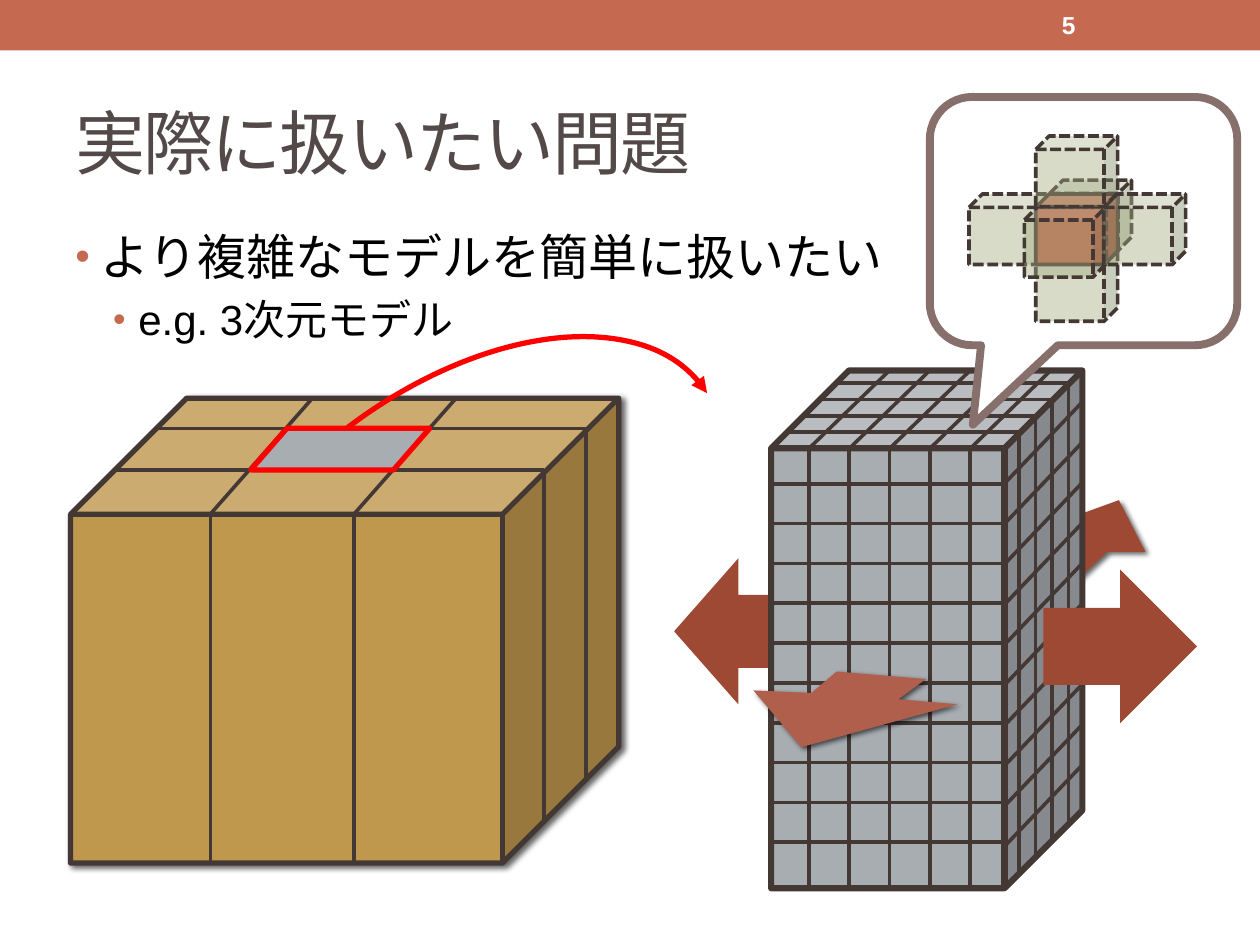
from lxml.etree import SubElement
from pptx import Presentation
from pptx.dml.color import RGBColor
from pptx.enum.dml import MSO_LINE
from pptx.enum.shapes import MSO_CONNECTOR, MSO_SHAPE
from pptx.enum.text import MSO_ANCHOR
from pptx.oxml.ns import qn
from pptx.util import Inches, Pt

COLORS = {
    "accent": "C66951", "title": "534949", "text": "000000", "white": "FFFFFF",
    "sand": "BF974D", "steel": "A8ADB2", "edge": "443835", "arrow": "9E4934",
    "front_arrow": "B15F4D", "highlight": "FF0000", "callout": "87706B", "ghost": "A1AA7E",
}

TITLE = "実際に扱いたい問題"
BULLETS = [
    ("より複雑なモデルを簡単に扱いたい", 28, 0.2),
    ("e.g. 3次元モデル", 24, 0.5),
]
PAGE_NUMBER = "5"

BACK_ARROW = [(8.3, 4.18), (8.88, 3.97), (9.09, 4.38), (8.79, 4.38), (8.3, 4.83)]
FRONT_ARROW = [(5.98, 5.48), (6.44, 5.5), (6.64, 5.33), (7.35, 5.39),
               (7.13, 5.55), (7.6, 5.59), (6.36, 5.93)]

GHOST, CORE = ("ghost", 42, MSO_LINE.SQUARE_DOT), ("accent", 100, MSO_LINE.SOLID)
NEIGHBOURS = [
    (8.22, 1.99, GHOST), (8.33, 1.43, GHOST), (7.69, 1.54, GHOST), (8.22, 1.54, CORE),
    (8.13, 1.64, GHOST), (8.76, 1.54, GHOST), (8.22, 1.08, GHOST),
]


def color(name):
    return RGBColor.from_string(COLORS[name])


def paint(shape, fill=None, line=None, width=0, dash=None, alpha=100):
    shape.shadow.inherit = False
    if fill:
        shape.fill.solid()
        shape.fill.fore_color.rgb = color(fill)
        if alpha < 100:
            tint = shape.fill._xPr.find(qn("a:solidFill"))[0]
            SubElement(tint, qn("a:alpha"), val=str(alpha * 1000))
    else:
        shape.fill.background()
    if line:
        shape.line.color.rgb = color(line)
        shape.line.width = Pt(width)
        if dash:
            shape.line.dash_style = dash
    else:
        shape.line.fill.background()
    return shape


def add_shape(shapes, kind, box, adjust=(), rotation=0, **style):
    shape = shapes.add_shape(kind, *map(Inches, box))
    for index, value in enumerate(adjust):
        shape.adjustments[index] = value
    shape.rotation = rotation
    return paint(shape, **style)


def add_outline(shapes, points, fill):
    corners = [(Inches(x), Inches(y)) for x, y in points]
    builder = shapes.build_freeform(*corners[0])
    builder.add_line_segments(corners[1:], close=True)
    return paint(builder.convert_to_shape(), fill)


def add_shadow(shape):
    effects = shape._element.spPr.find(qn("a:effectLst"))
    shadow = SubElement(effects, qn("a:outerShdw"), blurRad=str(Pt(3)),
                        dist=str(Pt(2)), dir="2700000", rotWithShape="0")
    tint = SubElement(shadow, qn("a:srgbClr"), val=COLORS["text"])
    SubElement(tint, qn("a:alpha"), val="60000")


def add_edge(shapes, x1, y1, x2, y2):
    edge = shapes.add_connector(MSO_CONNECTOR.STRAIGHT, *map(Inches, (x1, y1, x2, y2)))
    edge.line.color.rgb = color("edge")
    edge.line.width = Pt(2.08)
    SubElement(edge._element.spPr, qn("a:effectLst"))


def add_text(shapes, box, anchor, lines):
    frame = shapes.add_textbox(*map(Inches, box)).text_frame
    frame.word_wrap = True
    frame.vertical_anchor = anchor
    for index, (text, fonts) in enumerate(lines):
        paragraph = frame.add_paragraph() if index else frame.paragraphs[0]
        run = paragraph.add_run()
        run.text = text
        fonts = dict(fonts)
        run.font.color.rgb = color(fonts.pop("color"))
        for key, value in {"name": "Arial", **fonts}.items():
            setattr(run.font, key, value)
    return frame


def add_bullet(paragraph, indent):
    props = paragraph._p.get_or_add_pPr()
    props.set("marL", str(Inches(indent)))
    props.set("indent", str(Inches(-0.2)))
    SubElement(SubElement(props, qn("a:buClr")), qn("a:srgbClr"), val=COLORS["accent"])
    SubElement(props, qn("a:buSzPct"), val="85000")
    SubElement(props, qn("a:buFont"), typeface="Arial")
    SubElement(props, qn("a:buChar"), char="•")


def add_texts(shapes):
    add_shape(shapes, MSO_SHAPE.RECTANGLE, (0, 0, 10, 0.4), fill="accent")
    title = add_text(shapes, (0.5, 0.58, 9, 1.08), MSO_ANCHOR.MIDDLE,
                     [(TITLE, {"size": Pt(40), "color": "title"})])
    title.paragraphs[0].runs[0].font._element.set("spc", "-100")
    body = add_text(shapes, (0.5, 1.75, 9, 5.33), MSO_ANCHOR.TOP,
                    [(text, {"size": Pt(size), "color": "text"}) for text, size, _ in BULLETS])
    for paragraph, (_, size, indent) in zip(body.paragraphs, BULLETS):
        paragraph.space_before = Pt(round(size * 0.2, 1))
        add_bullet(paragraph, indent)
    add_text(shapes, (8.33, 0.02, 1.17, 0.36), MSO_ANCHOR.MIDDLE,
             [(PAGE_NUMBER, {"size": Pt(14), "bold": True, "color": "white"})])


def add_coarse_block(shapes):
    add_shadow(add_shape(shapes, MSO_SHAPE.CUBE, (0.56, 3.16, 4.35, 3.69),
                         fill="sand", line="edge", width=3))
    for i in range(2):
        column, step = 1.67 + 1.14 * i, 0.33 * i
        add_edge(shapes, column, 4.08, column + 0.81, 3.16)
        add_edge(shapes, column, 4.08, column, 6.85)
        add_edge(shapes, 0.91 + step, 3.73 - step, 4.32 + step, 3.73 - step)
        add_edge(shapes, 4.32 + step, 3.73 - step, 4.32 + step, 6.54 - step)


def add_fine_block(shapes):
    add_shadow(add_outline(shapes, BACK_ARROW, "arrow"))
    add_shape(shapes, MSO_SHAPE.RIGHT_ARROW, (5.35, 4.43, 1.02, 1.16), rotation=180, fill="arrow")
    add_shape(shapes, MSO_SHAPE.CUBE, (6.12, 2.94, 2.47, 4.11),
              fill="steel", line="edge", width=3.5)
    for i in range(5):
        column = 6.42 + 0.32 * i
        add_edge(shapes, column, 3.56, column, 7.05)
        add_edge(shapes, column, 3.56, column + 0.65, 2.93)
    for i in range(4):
        depth = 0.13 * i
        add_edge(shapes, 6.24 + depth, 3.43 - depth, 8.09 + depth, 3.43 - depth)
        add_edge(shapes, 8.09 + depth, 3.43 - depth, 8.09 + depth, 6.94 - depth)
    for i in range(10):
        row, side = 3.84 + 0.316 * i, 3.84 + 0.32 * i
        add_edge(shapes, 6.1, row, 7.97, row)
        add_edge(shapes, 7.97, side, 8.6, side - 0.66)
    add_shadow(add_outline(shapes, FRONT_ARROW, "front_arrow"))
    add_shape(shapes, MSO_SHAPE.RIGHT_ARROW, (8.28, 4.52, 1.22, 1.22), fill="arrow")


def add_zoom(shapes):
    add_shape(shapes, MSO_SHAPE.PARALLELOGRAM, (1.99, 3.4, 1.42, 0.33), [0.87],
              fill="steel", line="highlight", width=3)
    sweep = add_shape(shapes, MSO_SHAPE.ARC, (1.19, 3.1, 4.88, 2.88), [162, 0.95], 322.8,
                      line="highlight", width=3)
    SubElement(sweep.line._get_or_add_ln(), qn("a:tailEnd"), type="triangle")
    add_shape(shapes, MSO_SHAPE.ROUNDED_RECTANGULAR_CALLOUT, (7.38, 0.77, 2.44, 1.97),
              [-0.36, 0.82, 0.17], fill="white", line="callout", width=4.5)


def add_stencil(shapes):
    for left, top, (fill, alpha, dash) in NEIGHBOURS:
        add_shape(shapes, MSO_SHAPE.CUBE, (left, top, 0.65, 0.56), [0.19],
                  fill=fill, alpha=alpha, line="edge", width=2.08, dash=dash)


def main():
    deck = Presentation()
    deck.slide_width, deck.slide_height = Inches(10), Inches(7.5)
    shapes = deck.slides.add_slide(deck.slide_layouts[6]).shapes
    add_texts(shapes)
    add_coarse_block(shapes.add_group_shape().shapes)
    add_fine_block(shapes.add_group_shape().shapes)
    add_zoom(shapes)
    add_stencil(shapes.add_group_shape().shapes)
    deck.save("out.pptx")


if __name__ == "__main__":
    main()
